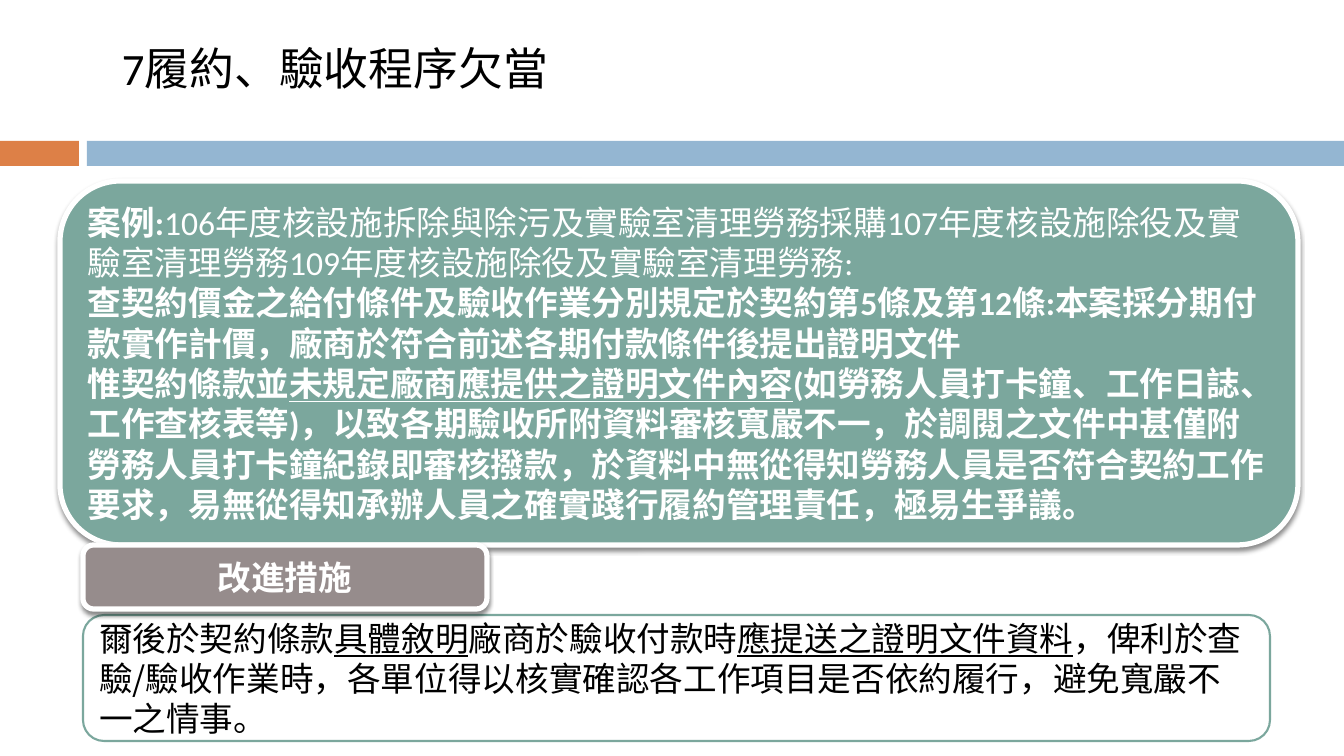
"""Build the slide on flawed contract performance and acceptance procedures."""
from lxml.etree import SubElement
from pptx import Presentation
from pptx.dml.color import RGBColor
from pptx.enum.shapes import MSO_SHAPE as Preset
from pptx.enum.text import MSO_ANCHOR as Anchor, PP_ALIGN as Align
from pptx.oxml.ns import qn
from pptx.util import Emu, Pt

COLORS = {
    "orange": "DD8047", "blue": "94B6D2", "green": "7BA79D",
    "taupe": "968C8C", "white": "FFFFFF", "black": "000000",
}
LATIN, CJK = "Calibri", "Noto Sans CJK SC"


def px(length):
    return Emu(round(length * 914400 / 100.8))


class SlideBuilder:
    """Holds the style and the current slide."""

    def __init__(self, slide):
        self.slide = slide

    def color(self, name):
        return RGBColor.from_string(COLORS[name])

    def block(self, preset, box, fill, line=None, width=0):
        block = self.slide.shapes.add_shape(preset, *map(px, box))
        block.shadow.inherit = False
        block.fill.solid()
        block.fill.fore_color.rgb = self.color(fill)
        if line:
            block.line.color.rgb = self.color(line)
            block.line.width = Pt(width)
        else:
            block.line.fill.background()
        return block

    def bar(self, box, fill):
        self.block(Preset.RECTANGLE, box, fill)

    def card(self, box, fill, line, width, paragraphs, raised=False, **style):
        card = self.block(Preset.ROUNDED_RECTANGLE, box, fill, line, width)
        if raised:
            self.cast_shadow(card)
        card.text_frame.vertical_anchor = Anchor.MIDDLE
        self.fill_text(card.text_frame, paragraphs, **style)

    def cast_shadow(self, card):
        effects = card._element.spPr.find(qn("a:effectLst"))
        shadow = SubElement(effects, qn("a:outerShdw"), blurRad=str(Pt(3)),
                            dist=str(Pt(2.4)), dir="5400000", rotWithShape="0")
        tone = SubElement(shadow, qn("a:srgbClr"), val=COLORS["black"])
        SubElement(tone, qn("a:alpha"), val="45000")

    def title(self, box, paragraphs, **style):
        title = self.slide.shapes.add_textbox(*map(px, box))
        self.fill_text(title.text_frame, paragraphs, **style)

    def fill_text(self, frame, paragraphs, color, size=24, font=LATIN, bold=None,
                  align=Align.LEFT):
        frame.word_wrap = True
        for index, parts in enumerate(paragraphs):
            paragraph = frame.paragraphs[0] if index == 0 else frame.add_paragraph()
            paragraph.alignment = align
            paragraph.font.size = Pt(size)
            paragraph.font.bold = bold
            paragraph.font.name = font
            paragraph.font.color.rgb = self.color(color)
            defaults = paragraph._p.pPr.find(qn("a:defRPr"))
            SubElement(defaults, qn("a:ea"), typeface=CJK)
            for text, *marks in parts:
                run = paragraph.add_run()
                run.text = text
                if "underline" in marks:
                    run.font.underline = True
                if "regular" in marks:
                    run.font.bold = False


def main():
    deck = Presentation()
    deck.slide_width, deck.slide_height = px(1344), px(756)
    page = SlideBuilder(deck.slides.add_slide(deck.slide_layouts[6]))

    page.bar((0, 141, 79, 25), "orange")
    page.bar((87, 141, 1257, 25), "blue")
    page.title((112, 36, 1118, 65), [[("7履約、驗收程序欠當",)]], color="black", size=32)

    case = [
        [("案例:",),
         ("106年度核設施拆除與除污及實驗室清理勞務採購107年度核設施除役及實驗室清理勞務"
          "109年度核設施除役及實驗室清理勞務:", "regular")],
        [("查契約價金之給付條件及驗收作業分別規定於契約第5條及第12條:本案採分期付款實作計價，"
          "廠商於符合前述各期付款條件後提出證明文件",)],
        [("惟契約條款並",),
         ("未規定廠商應提供之證明文件內容", "underline"),
         ("(如勞務人員打卡鐘、工作日誌、工作查核表等)，以致各期驗收所附資料審核寬嚴不一，"
          "於調閱之文件中甚僅附勞務人員打卡鐘紀錄即審核撥款，"
          "於資料中無從得知勞務人員是否符合契約工作要求，"
          "易無從得知承辦人員之確實踐行履約管理責任，極易生爭議。",)],
    ]
    page.card((60, 181, 1238, 364), "green", "white", 3.75, case,
              raised=True, color="white", bold=True)

    remedy = [
        [("爾後於契約條款",),
         ("具體敘明", "underline"),
         ("廠商於驗收付款時",),
         ("應提送之證明文件資料", "underline"),
         ("，俾利於查驗/驗收作業時，各單位得以核實確認各工作項目是否依約履行，"
          "避免寬嚴不一之情事。",)],
    ]
    page.card((83, 615, 1187, 126), "white", "green", 1.5, remedy, color="black", font=CJK)
    page.card((83, 545, 404, 64), "taupe", "white", 3.75, [[("改進措施",)]],
              raised=True, color="white", bold=True, align=Align.CENTER)

    deck.save("out.pptx")


if __name__ == "__main__":
    main()
